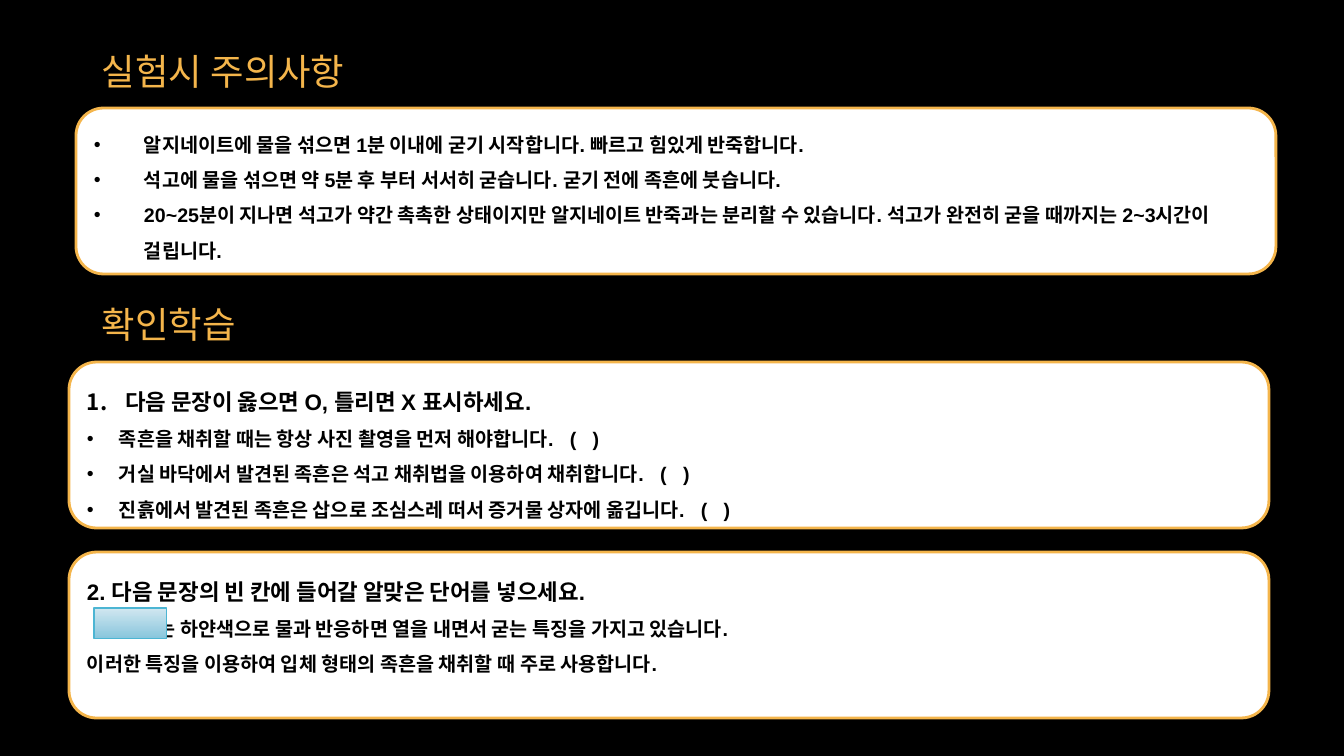
from lxml import etree
from pptx import Presentation, util as u
from pptx.dml.color import RGBColor
from pptx.enum import shapes, text
from pptx.oxml.ns import qn

INK = {"back": "000000", "card": "FFFFFF", "gold": "F4B54B", "text": "000000",
       "light": "D1E7F0", "deep": "87C5DC", "edge": "4CB5D3"}

# words, box in px, inset in px
TITLES = [
    ("실험시 주의사항", (92, 39, 294, 48), 10),
    ("확인학습", (92, 297, 175, 54), 5),
]

# left and top in px, then lines: words, size in pt, mark, margin and indent in px
CARDS = [
    (76, 108, [
        ("알지네이트에 물을 섞으면 1분 이내에 굳기 시작합니다. 빠르고 힘있게 반죽합니다.", 14, "•", 50, -50),
        ("석고에 물을 섞으면 약 5분 후 부터 서서히 굳습니다. 굳기 전에 족흔에 붓습니다.", 14, "•", 50, -50),
        ("20~25분이 지나면 석고가 약간 촉촉한 상태이지만 알지네이트 반죽과는 분리할 수 있습니다. "
         "석고가 완전히 굳을 때까지는 2~3시간이 걸립니다.", 14, "•", 50, -50),
    ]),
    (69, 362, [
        ("다음 문장이 옳으면 O, 틀리면 X 표시하세요.", 16, "1.", 38, -38),
        ("족흔을 채취할 때는 항상 사진 촬영을 먼저 해야합니다.   (   )", 14, "•", 32, -32),
        ("거실 바닥에서 발견된 족흔은 석고 채취법을 이용하여 채취합니다.   (   )", 14, "•", 32, -32),
        ("진흙에서 발견된 족흔은 삽으로 조심스레 떠서 증거물 상자에 옮깁니다.   (   )", 14, "•", 32, -32),
    ]),
    (69, 552, [
        ("2. 다음 문장의 빈 칸에 들어갈 알맞은 단어를 넣으세요.", 16, "", 0, 0),
        ("는 하얀색으로 물과 반응하면 열을 내면서 굳는 특징을 가지고 있습니다.", 14, "", 0, 71),
        ("이러한 특징을 이용하여 입체 형태의 족흔을 채취할 때 주로 사용합니다.", 14, "", 0, 0),
    ]),
]
CARD_W, CARD_H = 1200, 166
BLANK = (94, 608, 73, 31)


def px(n):
    return u.Emu(round(n * 914400 / 100.8))


def rgb(name):
    return RGBColor.from_string(INK[name])


def write(par, words, size, font, ink, bold=False):
    run = par.add_run()
    run.text = words
    run.font.size = u.Pt(size)
    run.font.name = font
    run.font.bold = bold
    run.font.color.rgb = rgb(ink)


def mark(par, sign, margin, indent):
    """Set the paragraph's indents and its bullet or number."""
    ppr = par._p.get_or_add_pPr()
    ppr.set("marL", str(px(margin)))
    ppr.set("indent", str(px(indent)))
    if sign == "1.":
        etree.SubElement(ppr, qn("a:buAutoNum"), type="arabicPeriod")
    elif sign:
        etree.SubElement(ppr, qn("a:buFont"), typeface="Arial")
        etree.SubElement(ppr, qn("a:buChar"), char=sign)


def add_box(slide, kind, box, edge, width):
    shape = slide.shapes.add_shape(kind, *map(px, box))
    shape.shadow.inherit = False
    shape.line.color.rgb = rgb(edge)
    shape.line.width = u.Pt(width)
    return shape


def add_title(slide, words, box, inset):
    frame = slide.shapes.add_textbox(*map(px, box)).text_frame
    frame.word_wrap = True
    frame.margin_top = frame.margin_bottom = px(inset)
    frame.margin_left = frame.margin_right = px(10)
    write(frame.paragraphs[0], words, 26, "Quicksand", "gold")


def add_card(slide, left, top, lines):
    card = add_box(slide, shapes.MSO_SHAPE.ROUNDED_RECTANGLE,
                   (left, top, CARD_W, CARD_H), "gold", 2)
    card.fill.solid()
    card.fill.fore_color.rgb = rgb("card")
    frame = card.text_frame
    frame.word_wrap = True
    frame.vertical_anchor = text.MSO_ANCHOR.TOP
    for i, (words, size, sign, margin, indent) in enumerate(lines):
        par = frame.add_paragraph() if i else frame.paragraphs[0]
        par.alignment = text.PP_ALIGN.LEFT
        par.line_spacing = 1.5
        mark(par, sign, margin, indent)
        write(par, words, size, "Arial", "text", True)


def add_blank(slide):
    """Cover the missing word with a shaded box."""
    blank = add_box(slide, shapes.MSO_SHAPE.RECTANGLE, BLANK, "edge", 0.75)
    blank.fill.gradient()
    blank.fill.gradient_angle = 270
    for stop, ink in zip(blank.fill.gradient_stops, ("light", "deep")):
        stop.color.rgb = rgb(ink)


def main():
    deck = Presentation()
    deck.slide_width, deck.slide_height = px(1344), px(756)
    slide = deck.slides.add_slide(deck.slide_layouts[6])
    slide.background.fill.solid()
    slide.background.fill.fore_color.rgb = rgb("back")
    for title in TITLES:
        add_title(slide, *title)
    for card in CARDS:
        add_card(slide, *card)
    add_blank(slide)
    deck.save("out.pptx")


if __name__ == "__main__":
    main()
